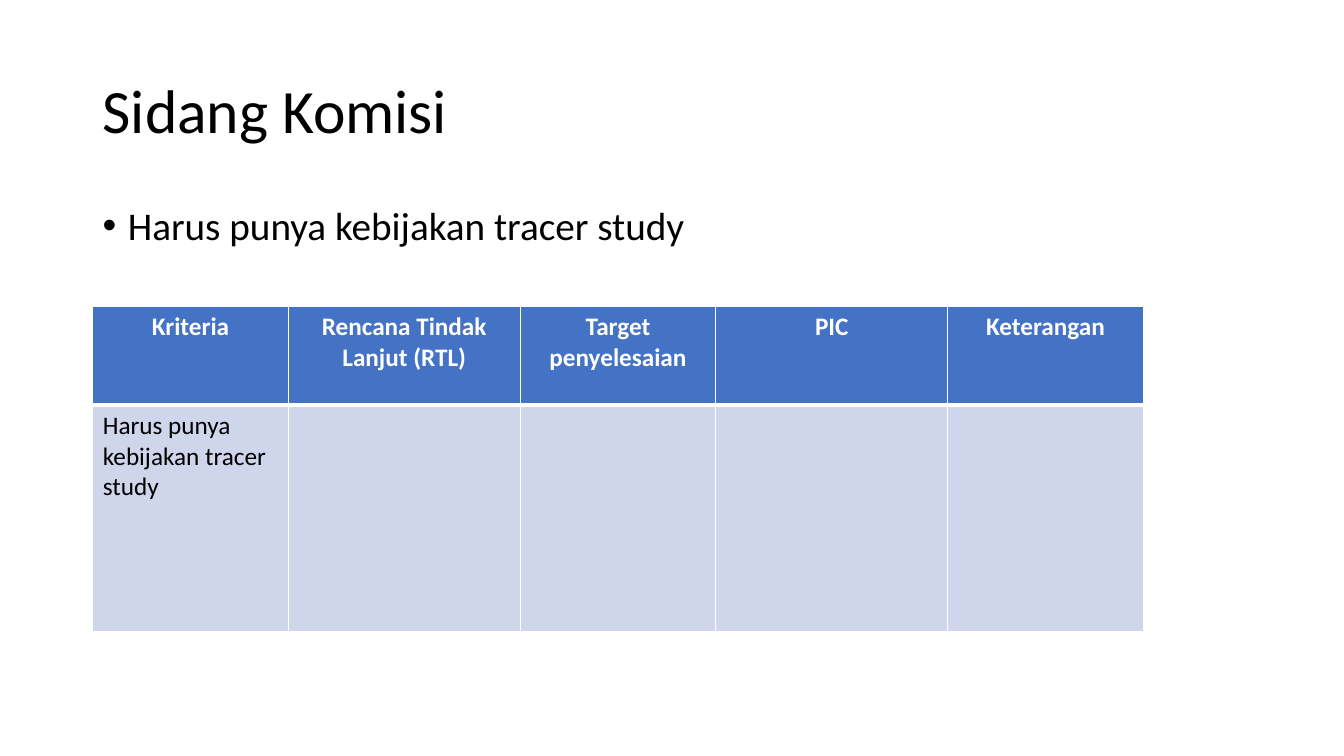
from lxml import etree
from pptx import Presentation
from pptx.dml.color import RGBColor
from pptx.enum.text import MSO_ANCHOR as Anchor, PP_ALIGN as Align
from pptx.oxml.ns import qn
from pptx.util import Inches, Pt

# Content
TITLE = "Sidang Komisi"
BULLET = "Harus punya kebijakan tracer study"
ROWS = [
    ["Kriteria", "Rencana Tindak Lanjut (RTL)", "Target penyelesaian", "PIC", "Keterangan"],
    ["Harus punya kebijakan tracer study", "", "", "", ""],
]

# Look and measures
FONT = "Calibri"
BLACK = RGBColor(0x00, 0x00, 0x00)
WHITE = RGBColor(0xFF, 0xFF, 0xFF)
HEADER_BLUE = RGBColor(0x44, 0x72, 0xC4)
BODY_BLUE = RGBColor(0xCF, 0xD5, 0xEA)
LEFT, TEXT_WIDTH = 0.92, 11.5
TABLE_TOP = 3.04
COLUMN_WIDTHS = [1.94, 2.3, 1.94, 2.3, 1.94]
ROW_HEIGHTS = [0.98, 2.25]


def style_text(para, size, color, bold=False):
    for span in para.runs:
        span.font.name = FONT
        span.font.size = Pt(size)
        span.font.bold = bold
        span.font.color.rgb = color


def add_text(page, text, top, height, size, anchor):
    box = page.shapes.add_textbox(Inches(LEFT), Inches(top), Inches(TEXT_WIDTH), Inches(height))
    frame = box.text_frame
    frame.word_wrap = True
    frame.vertical_anchor = anchor
    para = frame.paragraphs[0]
    para.text = text
    para.line_spacing = 0.9
    style_text(para, size, BLACK)
    return para


def add_bullet(para, indent):
    props = para._p.get_or_add_pPr()
    props.set("marL", str(Inches(indent)))
    props.set("indent", str(-Inches(indent)))
    etree.SubElement(props, qn("a:buFont"), typeface="Arial")
    etree.SubElement(props, qn("a:buChar"), char="•")


def add_borders(cell, widths):
    props = cell._tc.get_or_add_tcPr()
    for side, width in widths.items():
        line = etree.SubElement(props, qn(f"a:ln{side}"), w=str(Pt(width)))
        fill = etree.SubElement(line, qn("a:solidFill"))
        etree.SubElement(fill, qn("a:srgbClr"), val=str(WHITE))


def add_plan_table(page):
    table = page.shapes.add_table(
        len(ROWS), len(COLUMN_WIDTHS), Inches(LEFT), Inches(TABLE_TOP),
        Inches(sum(COLUMN_WIDTHS)), Inches(sum(ROW_HEIGHTS))).table
    for column, width in zip(table.columns, COLUMN_WIDTHS):
        column.width = Inches(width)
    for row_index, texts in enumerate(ROWS):
        table.rows[row_index].height = Inches(ROW_HEIGHTS[row_index])
        header = row_index == 0
        for column_index, text in enumerate(texts):
            cell = table.cell(row_index, column_index)
            # The rule between header and body is thicker than the rest
            add_borders(cell, {"L": 1, "R": 1, "T": 1 if header else 3, "B": 3 if header else 1})
            cell.fill.solid()
            cell.fill.fore_color.rgb = HEADER_BLUE if header else BODY_BLUE
            if text:
                para = cell.text_frame.paragraphs[0]
                para.text = text
                para.alignment = Align.CENTER if header else Align.LEFT
                style_text(para, 18, WHITE if header else BLACK, header)


def main():
    deck = Presentation()
    deck.slide_width, deck.slide_height = Inches(13.33), Inches(7.5)
    page = deck.slides.add_slide(deck.slide_layouts[6])

    # Title and bullet
    add_text(page, TITLE, 0.4, 1.45, 44, Anchor.MIDDLE)
    point = add_text(page, BULLET, 2, 4.76, 28, Anchor.TOP)
    point.space_before = Pt(10)
    add_bullet(point, 0.25)

    # Follow-up plan
    add_plan_table(page)
    deck.save("out.pptx")


if __name__ == "__main__":
    main()
